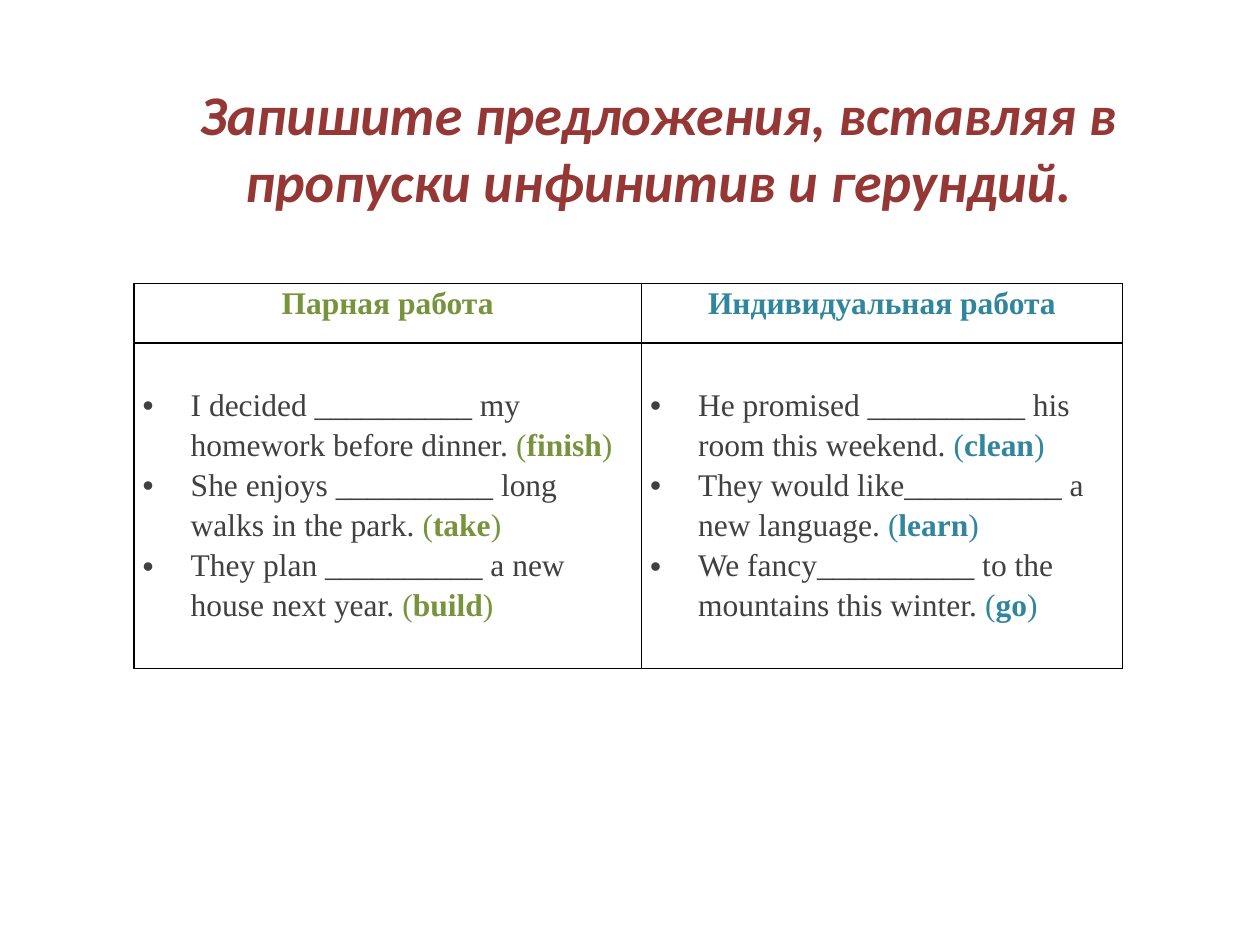
from lxml import etree
from pptx import Presentation
from pptx.dml.color import RGBColor
from pptx.enum import text
from pptx.oxml import ns
from pptx.util import Pt

COLORS = {"title": "953735", "pair": "77933C", "solo": "31859C",
          "body": "404040", "border": "000000"}
SERIF = "Times New Roman"
COLUMN_WIDTHS = (290, 275)
ROW_HEIGHTS = (34, 186)
BLANK_LINE = 23

# Heading, accent colour, and exercises as (sentence, verb)
COLUMNS = [
    ("Парная работа", "pair", [
        ("I decided __________ my homework before dinner. ", "finish"),
        ("She enjoys __________ long walks in the park. ", "take"),
        ("They plan __________ a new house next year. ", "build"),
    ]),
    ("Индивидуальная работа", "solo", [
        ("He promised __________ his room this weekend. ", "clean"),
        ("They would like__________ a new language. ", "learn"),
        ("We fancy__________ to the mountains this winter. ", "go"),
    ]),
]


def add_text(paragraph, words, color, size=18, font=SERIF, bold=False, italic=False):
    run = paragraph.add_run()
    run.text = words
    run.font.name, run.font.size = font, Pt(size)
    run.font.bold, run.font.italic = bold, italic
    run.font.color.rgb = RGBColor.from_string(COLORS[color])


def add_bullet(paragraph, indent=27.5):
    properties = paragraph._p.get_or_add_pPr()
    properties.set("marL", str(Pt(indent)))
    properties.set("indent", str(Pt(-indent)))
    etree.SubElement(properties, ns.qn("a:buFont"), typeface="Arial")
    etree.SubElement(properties, ns.qn("a:buChar"), char="•")


def format_cell(cell, top=0):
    cell.margin_left = cell.margin_right = Pt(5)
    cell.margin_top, cell.margin_bottom = Pt(top), 0
    cell.fill.background()
    # Borders come before the fill
    properties = cell._tc.get_or_add_tcPr()
    for position, side in enumerate(("lnL", "lnR", "lnT", "lnB")):
        line = etree.Element(ns.qn(f"a:{side}"), w=str(Pt(1)))
        fill = etree.SubElement(line, ns.qn("a:solidFill"))
        etree.SubElement(fill, ns.qn("a:srgbClr"), val=COLORS["border"])
        properties.insert(position, line)


def add_title(slide):
    title = slide.shapes.title
    title.left, title.top, title.width, title.height = Pt(70.5), Pt(26), Pt(612), Pt(116)
    title.text_frame.vertical_anchor = text.MSO_ANCHOR.MIDDLE
    paragraph = title.text_frame.paragraphs[0]
    paragraph.alignment = text.PP_ALIGN.CENTER
    add_text(paragraph, "Запишите предложения, вставляя в пропуски инфинитив и герундий.",
             "title", size=32, font="Calibri", bold=True, italic=True)


def fill_heading(cell, heading, accent):
    format_cell(cell)
    paragraph = cell.text_frame.paragraphs[0]
    paragraph.alignment = text.PP_ALIGN.CENTER
    paragraph.line_spacing = 1.07
    add_text(paragraph, heading, accent, bold=True)


def fill_exercises(cell, exercises, accent):
    format_cell(cell, top=BLANK_LINE)
    frame = cell.text_frame
    for number, (sentence, verb) in enumerate(exercises):
        paragraph = frame.add_paragraph() if number else frame.paragraphs[0]
        paragraph.line_spacing = 1.15
        add_bullet(paragraph)
        add_text(paragraph, sentence, "body")
        add_text(paragraph, "(", accent)
        add_text(paragraph, verb, accent, bold=True)
        add_text(paragraph, ")", accent)


def add_exercise_table(slide):
    table = slide.shapes.add_table(2, 2, Pt(76.5), Pt(162), Pt(sum(COLUMN_WIDTHS)),
                                   Pt(sum(ROW_HEIGHTS))).table
    table.first_row = table.horz_banding = False
    for row, height in zip(table.rows, ROW_HEIGHTS):
        row.height = Pt(height)
    for index, (heading, accent, exercises) in enumerate(COLUMNS):
        table.columns[index].width = Pt(COLUMN_WIDTHS[index])
        fill_heading(table.cell(0, index), heading, accent)
        fill_exercises(table.cell(1, index), exercises, accent)


def main():
    deck = Presentation()
    deck.slide_width, deck.slide_height = Pt(720), Pt(540)
    slide = deck.slides.add_slide(deck.slide_layouts[5])
    add_title(slide)
    add_exercise_table(slide)
    deck.save("out.pptx")


if __name__ == "__main__":
    main()
